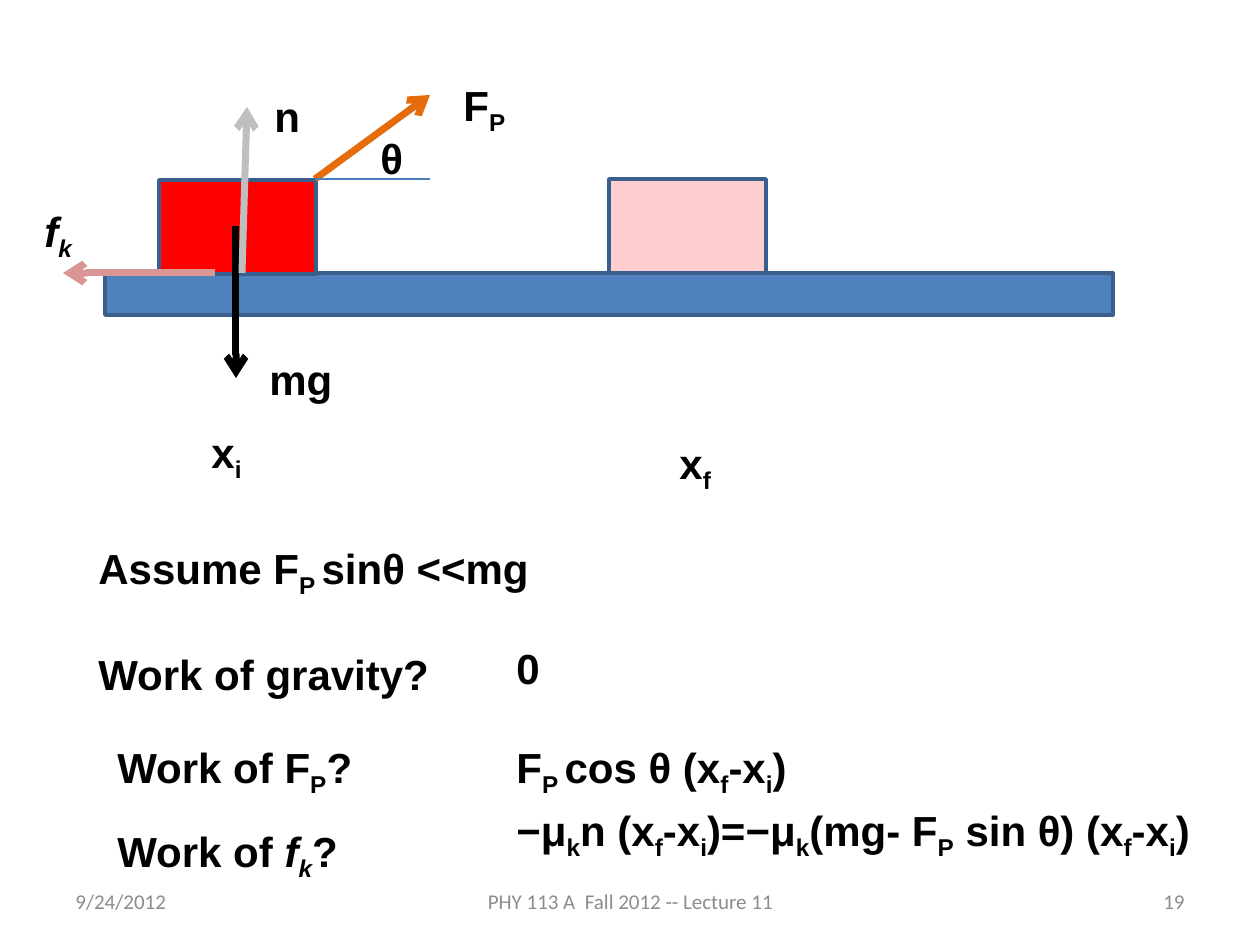
from dataclasses import dataclass

from lxml import etree
from pptx import Presentation
from pptx import util as u
from pptx.dml.color import RGBColor
from pptx.enum import shapes, text
from pptx.oxml.ns import qn

PX = u.Inches(1) / 126  # EMU in one px


@dataclass(frozen=True)
class Theme:
    font: str = "Arial"
    footer_font: str = "Calibri"
    body_pt: int = 24
    footer_pt: int = 12
    ink: str = "000000"
    muted: str = "8C8C8C"
    track: str = "4F81BD"
    outline: str = "3A5F8C"
    block: str = "FF0000"
    push: str = "E46C0A"
    level: str = "4B7EBC"
    normal: str = "BFBFBF"
    friction: str = "D99694"


T = Theme()


def px(*values):
    return [u.Emu(round(v * PX)) for v in values]


def rgb(color):
    return RGBColor.from_string(color)


def add_box(s, at, fill, alpha=None):
    sp = s.shapes.add_shape(shapes.MSO_SHAPE.RECTANGLE, *px(*at))
    sp.shadow.inherit = False
    sp.fill.solid()
    sp.fill.fore_color.rgb = rgb(fill)
    sp.line.color.rgb = rgb(T.outline)
    sp.line.width = u.Pt(2)
    if alpha is not None:
        clr = sp._element.spPr.find(qn("a:solidFill"))[0]
        etree.SubElement(clr, qn("a:alpha"), val=str(alpha * 1000))


def add_line(s, ends, color, width, arrow=True):
    ln = s.shapes.add_connector(shapes.MSO_CONNECTOR.STRAIGHT, *px(*ends))
    ln.line.color.rgb = rgb(color)
    ln.line.width = u.Pt(width)
    if arrow:
        etree.SubElement(ln.line._get_or_add_ln(), qn("a:tailEnd"), type="arrow")
    etree.SubElement(ln._element.spPr, qn("a:effectLst"))


def add_runs(p, markup):
    """Asterisks enclose italics; bars enclose subscripts."""
    for i, span in enumerate(markup.split("*")):
        for j, piece in enumerate(span.split("|")):
            if not piece:
                continue
            r = p.add_run()
            r.text = piece
            if i % 2:
                r.font.italic = True
            if j % 2:
                r.font._element.set("baseline", "-25000")


def add_text(s, at, *lines, gap=0):
    tf = s.shapes.add_textbox(*px(*at)).text_frame
    tf.word_wrap = True
    for i, line in enumerate(lines):
        p = tf.add_paragraph() if i else tf.paragraphs[0]
        p.font.name, p.font.size, p.font.bold = T.font, u.Pt(T.body_pt), True
        p.font.color.rgb = rgb(T.ink)
        if i:
            p.space_before = u.Pt(gap)
        add_runs(p, line)


def add_footer(s, left, width, words, align):
    tf = s.shapes.add_textbox(*px(left, 876, width, 50)).text_frame
    tf.word_wrap = True
    tf.vertical_anchor = text.MSO_ANCHOR.MIDDLE
    p = tf.paragraphs[0]
    p.text, p.alignment = words, align
    p.font.name, p.font.size = T.footer_font, u.Pt(T.footer_pt)
    p.font.color.rgb = rgb(T.muted)


def main():
    prs = Presentation()
    prs.slide_width, prs.slide_height = u.Inches(10), u.Inches(7.5)
    s = prs.slides.add_slide(prs.slide_layouts[6])

    # Footer
    align = text.PP_ALIGN
    add_footer(s, 63, 294, "9/24/2012", align.LEFT)
    add_footer(s, 431, 399, "PHY 113 A  Fall 2012 -- Lecture 11", align.CENTER)
    add_footer(s, 903, 294, "19", align.RIGHT)

    # Track with the block at its start and end
    add_box(s, (105, 273, 1008, 42), T.track)
    add_box(s, (159, 180, 157, 94), T.block)
    add_box(s, (609, 179, 157, 94), T.block, alpha=19)

    # Forces and the level line of the angle
    add_line(s, (315, 179, 430, 95), T.push, 4)
    add_line(s, (315, 179, 430, 179), T.level, 0.75, arrow=False)
    add_line(s, (236, 226, 236, 378), T.ink, 4)
    add_line(s, (242, 273, 247, 107), T.normal, 4)
    add_line(s, (215, 273, 63, 273), T.friction, 4)

    # Diagram labels
    for left, top, label in (
        (451, 73, "F|P|"),
        (368, 126, "θ"),
        (257, 347, "mg"),
        (262, 84, "n"),
        (32, 199, "*f|k|*"),
        (199, 420, "x|i|"),
        (667, 431, "x|f|"),
    ):
        add_text(s, (left, top, 110, 63), label)

    # Questions
    add_text(s, (86, 536, 1047, 165), "Assume F|P |sinθ <<mg",
             "Work of gravity?", gap=28)
    add_text(s, (105, 735, 305, 63), "Work of F|P|?")
    add_text(s, (105, 819, 305, 63), "Work of *f|k|*?")

    # Answers
    shift = "(x|f|-x|i|)"
    add_text(s, (504, 636, 105, 63), "0")
    add_text(s, (504, 735, 357, 63), f"F|P |cos θ {shift}")
    add_text(s, (504, 798, 735, 63),
             f"−μ|k|n {shift}=−μ|k|(mg- F|P| sin θ) {shift}")

    prs.save("out.pptx")


if __name__ == "__main__":
    main()
